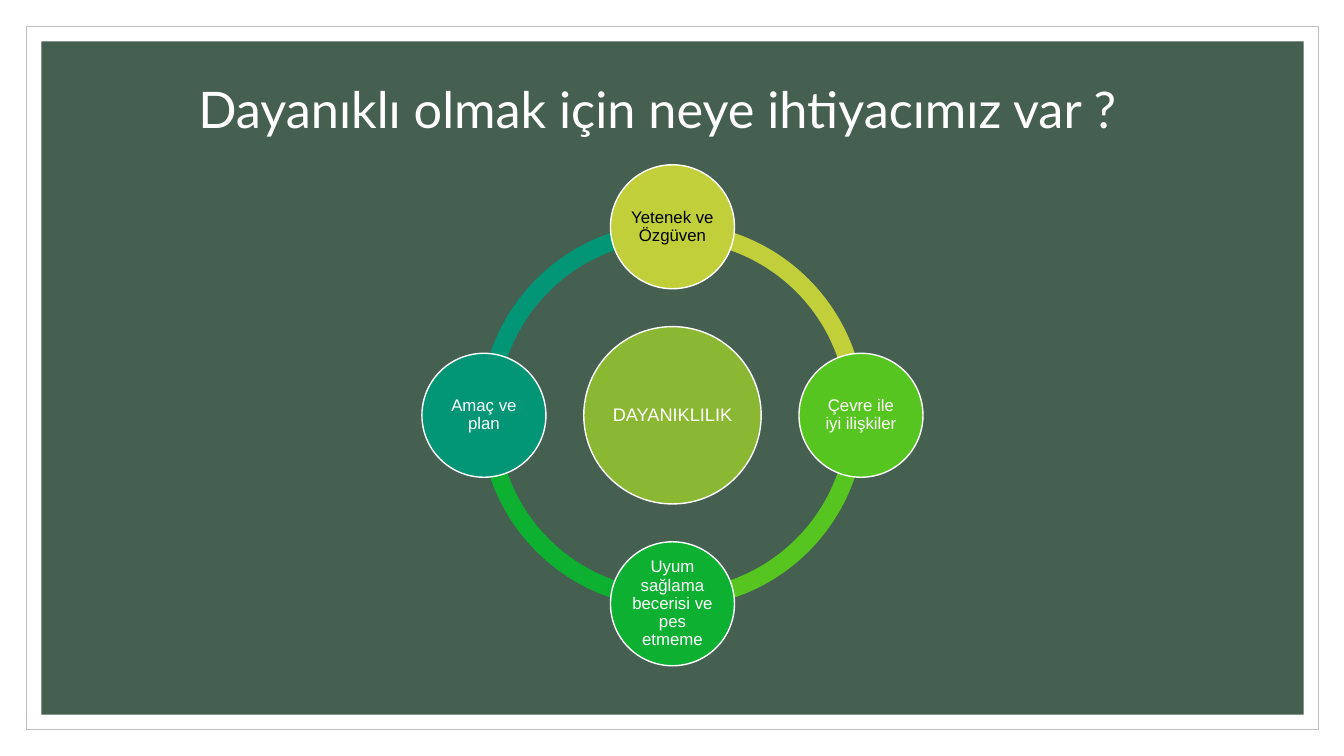
"""Build a slide showing resilience and the four needs that surround it."""
from dataclasses import dataclass
from math import cos, pi, sin

from pptx import Presentation
from pptx import util as u
from pptx.dml.color import RGBColor
from pptx.enum import shapes, text

WHITE = RGBColor(0xFF, 0xFF, 0xFF)
BLACK = RGBColor(0x00, 0x00, 0x00)
FRAME_GREY = RGBColor(0xBF, 0xBF, 0xBF)
PANEL_GREEN = RGBColor(0x45, 0x5F, 0x51)
HUB_GREEN = RGBColor(0x8A, 0xB8, 0x33)
LIME = RGBColor(0xC0, 0xCF, 0x3A)
LEAF = RGBColor(0x57, 0xC5, 0x1F)
EMERALD = RGBColor(0x0E, 0xB0, 0x32)
TEAL = RGBColor(0x02, 0x96, 0x76)

CENTER_X, CENTER_Y = 6.67, 4.12
ORBIT = 1.87
NEED_SIZE = 1.23
HUB_SIZE = 1.76
RING_SIZE = 3.82
RING_THICKNESS = 0.046
QUARTER, FULL_TURN = 54, 216


@dataclass(frozen=True)
class Need:
    label: str
    fill: RGBColor
    ink: RGBColor = WHITE


NEEDS = (
    Need("Yetenek ve Özgüven", LIME, BLACK),
    Need("Çevre ile iyi ilişkiler", LEAF),
    Need("Uyum sağlama becerisi ve pes etmeme", EMERALD),
    Need("Amaç ve plan", TEAL),
)


def write(shape, words: str, *, size: float, font: str = "Arial",
          color: RGBColor = WHITE, inset: float = 0.02) -> None:
    frame = shape.text_frame
    frame.word_wrap = True
    frame.auto_size = text.MSO_AUTO_SIZE.NONE
    frame.vertical_anchor = text.MSO_ANCHOR.MIDDLE
    frame.margin_left = frame.margin_right = u.Inches(inset)
    frame.margin_top = frame.margin_bottom = u.Inches(inset)
    paragraph = frame.paragraphs[0]
    paragraph.alignment = text.PP_ALIGN.CENTER
    paragraph.line_spacing = 0.9
    run = paragraph.add_run()
    run.text = words
    run.font.size = u.Pt(size)
    run.font.name = font
    run.font.color.rgb = color


def draw(parent, kind: shapes.MSO_SHAPE, left: float, top: float, width: float,
         height: float, fill: RGBColor, line: RGBColor | None = None,
         line_width: float = 1):
    shape = parent.add_shape(kind, *map(u.Inches, (left, top, width, height)))
    shape.shadow.inherit = False
    shape.fill.solid()
    shape.fill.fore_color.rgb = fill
    if line is None:
        shape.line.fill.background()
    else:
        shape.line.color.rgb = line
        shape.line.width = u.Pt(line_width)
    return shape


def draw_round(parent, kind: shapes.MSO_SHAPE, x: float, y: float, size: float,
               fill: RGBColor, line: RGBColor | None = None):
    return draw(parent, kind, x - size / 2, y - size / 2, size, size, fill, line)


def draw_cycle(parent) -> None:
    for index, need in reversed(tuple(enumerate(NEEDS))):
        arc = draw_round(parent, shapes.MSO_SHAPE.BLOCK_ARC, CENTER_X, CENTER_Y,
                         RING_SIZE, need.fill)
        start = (index - 1) * QUARTER % FULL_TURN
        arc.adjustments[0] = start
        arc.adjustments[1] = (start + QUARTER) % FULL_TURN
        arc.adjustments[2] = RING_THICKNESS

    hub = draw_round(parent, shapes.MSO_SHAPE.OVAL, CENTER_X, CENTER_Y,
                     HUB_SIZE, HUB_GREEN, WHITE)
    write(hub, "DAYANIKLILIK", size=13)

    for index, need in enumerate(NEEDS):
        angle = index * pi / 2
        circle = draw_round(parent, shapes.MSO_SHAPE.OVAL,
                            CENTER_X + ORBIT * sin(angle),
                            CENTER_Y - ORBIT * cos(angle),
                            NEED_SIZE, need.fill, WHITE)
        write(circle, need.label, size=12, color=need.ink)


def main() -> None:
    deck = Presentation()
    deck.slide_width, deck.slide_height = u.Inches(13.33), u.Inches(7.5)
    slide = deck.slides.add_slide(deck.slide_layouts[5])

    draw(slide.shapes, shapes.MSO_SHAPE.RECTANGLE, 0.26, 0.26, 12.82, 6.98,
         WHITE, FRAME_GREY, 0.5)
    panel = draw(slide.shapes, shapes.MSO_SHAPE.RECTANGLE, 0.41, 0.41, 12.52, 6.68,
                 PANEL_GREEN)

    title = slide.shapes.title
    panel.element.addnext(title.element)
    title.left, title.top = u.Inches(1.02), u.Inches(0.74)
    title.width, title.height = u.Inches(11), u.Inches(0.74)
    write(title, "Dayanıklı olmak için neye ihtiyacımız var ?", size=36,
          font="Lato", inset=0.05)

    draw_cycle(slide.shapes.add_group_shape().shapes)
    deck.save("out.pptx")


if __name__ == "__main__":
    main()
